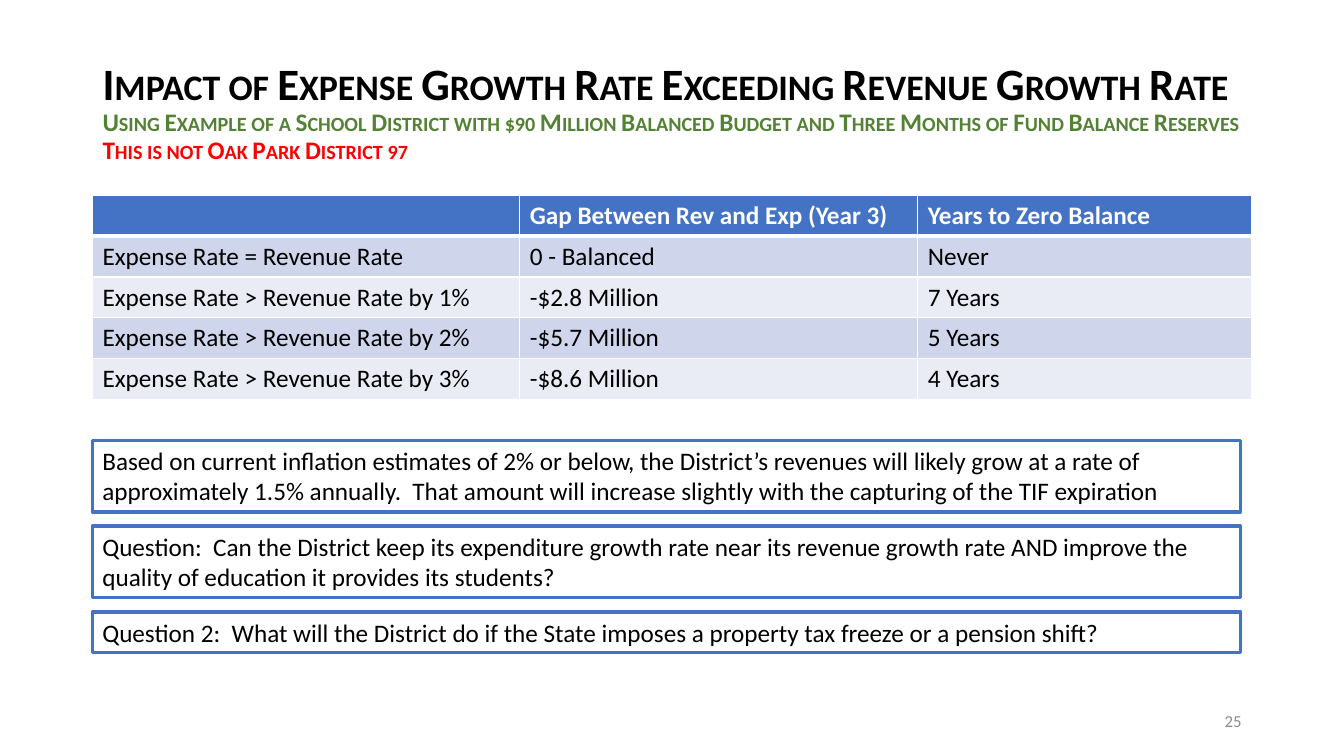
from lxml.etree import SubElement
from pptx import Presentation
from pptx.dml.color import RGBColor
from pptx.enum.text import MSO_ANCHOR, MSO_AUTO_SIZE, PP_ALIGN
from pptx.oxml.ns import qn
from pptx.util import Cm, Pt

BLUE, WHITE, BLACK = "4472C4", "FFFFFF", "000000"
BANDS = ("CFD5EA", "E9EBF5")
LEFT = 2.33

TITLE_LINES = [
    ("Impact of Expense Growth Rate Exceeding Revenue Growth Rate", 32, BLACK),
    ("Using Example of a School District with $90 Million Balanced Budget "
     "and Three Months of Fund Balance Reserves", 18, "548235"),
    ("This is not Oak Park District 97", 18, "FF0000"),
]
COLUMN_WIDTHS = (10.77, 10.03, 8.41)
GROWTH_ROWS = [
    ("", "Gap Between Rev and Exp (Year 3)", "Years to Zero Balance"),
    ("Expense Rate = Revenue Rate", "0 - Balanced", "Never"),
    ("Expense Rate > Revenue Rate by 1%", "-$2.8 Million", "7 Years"),
    ("Expense Rate > Revenue Rate by 2%", "-$5.7 Million", "5 Years"),
    ("Expense Rate > Revenue Rate by 3%", "-$8.6 Million", "4 Years"),
]
NOTES = [
    ("Based on current inflation estimates of 2% or below, the District’s revenues will "
     "likely grow at a rate of approximately 1.5% annually.  That amount will increase "
     "slightly with the capturing of the TIF expiration", 1.8),
    ("Question:  Can the District keep its expenditure growth rate near its revenue growth "
     "rate AND improve the quality of education it provides its students?", 1.8),
    ("Question 2:  What will the District do if the State imposes a property tax freeze "
     "or a pension shift?", 1.03),
]


def color(value):
    return RGBColor.from_string(value)


def write(para, text, size=18, fill=BLACK, bold=False, small_caps=False,
          align=PP_ALIGN.LEFT):
    para.alignment = align
    span = para.add_run()
    span.text = text
    font = span.font
    font.name, font.size, font.bold = "Calibri", Pt(size), bold
    font.color.rgb = color(fill)
    if small_caps:
        span._r.get_or_add_rPr().set("cap", "small")


def add_title(page):
    title = page.shapes.title
    title.left, title.top, title.width, title.height = Cm(LEFT), Cm(1.01), Cm(29.21), Cm(3.68)
    frame = title.text_frame
    frame.word_wrap = True
    frame.auto_size = MSO_AUTO_SIZE.NONE
    frame.vertical_anchor = MSO_ANCHOR.MIDDLE
    for index, (text, size, fill) in enumerate(TITLE_LINES):
        para = frame.add_paragraph() if index else frame.paragraphs[0]
        para.line_spacing = 0.9
        para.space_before = Pt(0)
        write(para, text, size=size, fill=fill, bold=True, small_caps=True)


def set_borders(cell, top, bottom):
    properties = cell._tc.get_or_add_tcPr()
    for side, points in (("L", 1), ("R", 1), ("T", top), ("B", bottom)):
        edge = SubElement(properties, qn(f"a:ln{side}"), w=str(Pt(points)))
        SubElement(SubElement(edge, qn("a:solidFill")), qn("a:srgbClr"), val=WHITE)


def add_growth_table(page):
    row_height = 1.03
    table = page.shapes.add_table(
        len(GROWTH_ROWS), len(COLUMN_WIDTHS), Cm(LEFT), Cm(4.92),
        Cm(sum(COLUMN_WIDTHS)), Cm(row_height * len(GROWTH_ROWS))).table
    for column, width in zip(table.columns, COLUMN_WIDTHS):
        column.width = Cm(width)
    for index, texts in enumerate(GROWTH_ROWS):
        header = index == 0
        table.rows[index].height = Cm(row_height)
        for cell, text in zip(table.rows[index].cells, texts):
            # Borders come before the fill in the cell properties
            set_borders(cell, top=3 if index == 1 else 1, bottom=3 if header else 1)
            cell.fill.solid()
            cell.fill.fore_color.rgb = color(BLUE if header else BANDS[(index - 1) % 2])
            if text:
                write(cell.text_frame.paragraphs[0], text,
                      fill=WHITE if header else BLACK, bold=header)


def add_text_box(page, text, left, top, width, height, outline=None,
                 anchor=MSO_ANCHOR.TOP, **text_format):
    box = page.shapes.add_textbox(Cm(left), Cm(top), Cm(width), Cm(height))
    box.text_frame.word_wrap = True
    box.text_frame.vertical_anchor = anchor
    if outline:
        box.line.color.rgb = color(outline)
        box.line.width = Pt(2.5)
    write(box.text_frame.paragraphs[0], text, **text_format)


def main():
    deck = Presentation()
    deck.slide_width, deck.slide_height = Cm(33.87), Cm(19.05)
    page = deck.slides.add_slide(deck.slide_layouts.get_by_name("Title Only"))

    add_title(page)
    add_growth_table(page)

    # Outlined notes below the table
    for index, (text, height) in enumerate(NOTES):
        add_text_box(page, text, LEFT, 11.1 + 2.16 * index, 28.93, height, outline=BLUE)

    # Page number
    add_text_box(page, "25", 23.92, 17.65, 7.62, 1.01, anchor=MSO_ANCHOR.MIDDLE,
                 size=12, fill="8C8C8C", align=PP_ALIGN.RIGHT)
    deck.save("out.pptx")


if __name__ == "__main__":
    main()
